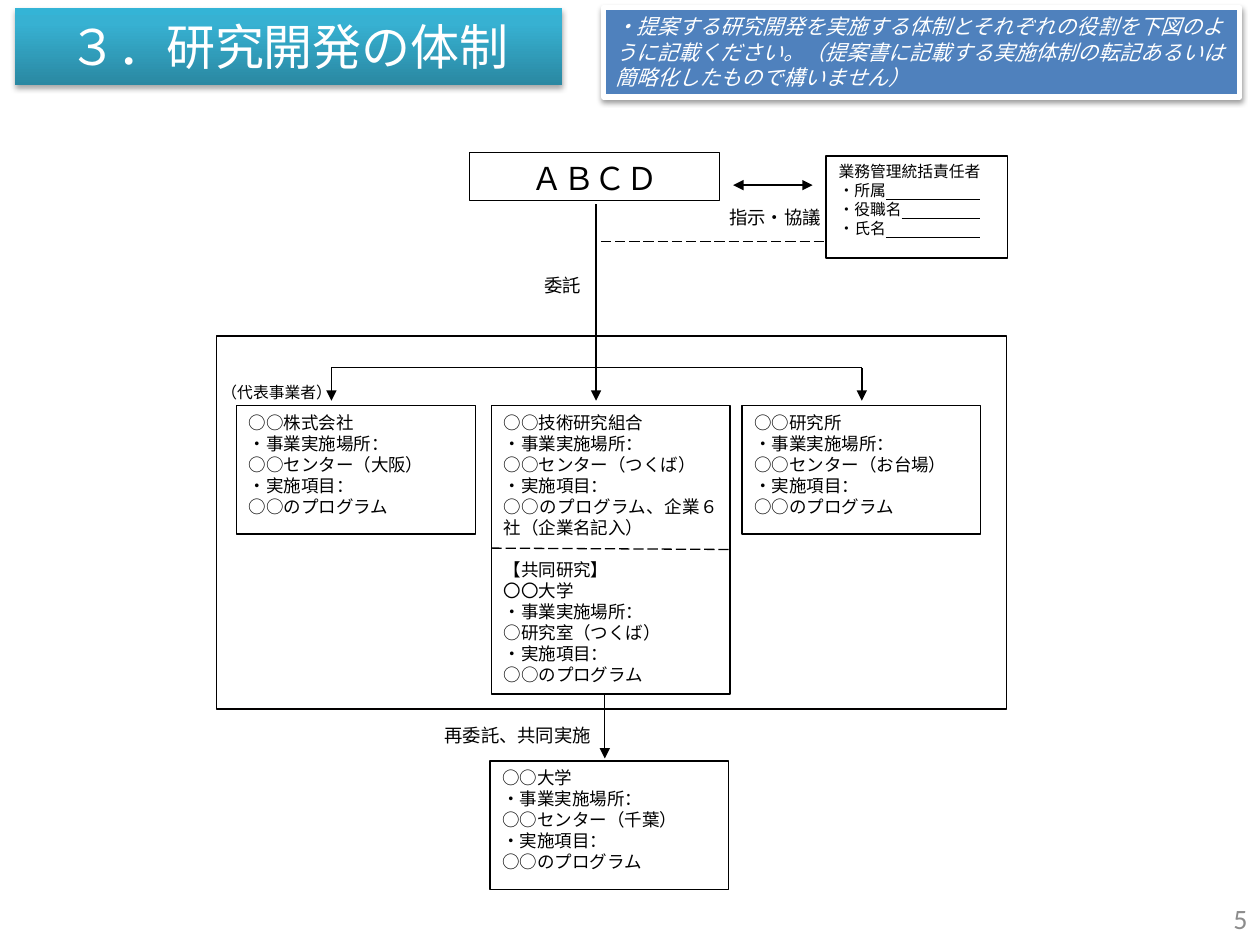
"""Build the slide that charts a research and development structure."""
from lxml import etree
from pptx import Presentation
from pptx.dml.color import RGBColor
from pptx.enum import dml, shapes, text
from pptx.oxml import ns
from pptx.util import Pt

LEFT, MID, RIGHT, JUST = (
    text.PP_ALIGN.LEFT, text.PP_ALIGN.CENTER, text.PP_ALIGN.RIGHT, text.PP_ALIGN.JUSTIFY)
TOP, CENTER = text.MSO_ANCHOR.TOP, text.MSO_ANCHOR.MIDDLE


def color(code):
    return RGBColor.from_string(code)


def node(root, tag, **attrs):
    return etree.SubElement(root, ns.qn(f"a:{tag}"), **attrs)


class Chart:
    font, ink, paper, thin = "Arial", "000000", "FFFFFF", 0.75

    def __init__(self, deck):
        self.slide = deck.slides.add_slide(deck.slide_layouts[5])

    def words(self, shape, lines, size, align=JUST, ink=None, font=None,
              anchor=TOP, italic=None):
        frame = shape.text_frame
        frame.word_wrap = True
        frame.auto_size = text.MSO_AUTO_SIZE.NONE
        frame.vertical_anchor = anchor
        for i, line in enumerate(lines):
            para = frame.add_paragraph() if i else frame.paragraphs[0]
            para.alignment = align
            for j, part in enumerate([line] if isinstance(line, str) else line):
                run = para.add_run()
                run.text = part
                face = run.font
                face.name, face.size = font or self.font, Pt(size)
                face.color.rgb = color(ink or self.ink)
                face.italic = italic
                face.underline = True if j else None
        return frame

    def shade(self, shape, alpha, dist):
        group = node(shape._element.spPr, "effectLst")
        cast = node(group, "outerShdw", blurRad=str(Pt(3.1)), dist=str(Pt(dist)),
                    dir="5400000", rotWithShape="0")
        node(node(cast, "srgbClr", val="000000"), "alpha", val=str(alpha * 1000))

    def title(self, line, spot):
        shape = self.slide.shapes.title
        shape.left, shape.top, shape.width, shape.height = map(Pt, spot)
        self.words(shape, [line], 28, MID, self.paper, anchor=CENTER)
        grad = node(shape._element.spPr, "gradFill", rotWithShape="1")
        stops = node(grad, "gsLst")
        for place, code in ((0, "2A88A2"), (80, "37B1D2"), (100, "34B4D6")):
            node(node(stops, "gs", pos=str(place * 1000)), "srgbClr", val=code)
        node(grad, "lin", ang="16200000", scaled="0")
        self.shade(shape, 35, 1.8)

    def rect(self, spot, fill=None, line=None, width=None):
        shape = self.slide.shapes.add_shape(
            shapes.MSO_SHAPE.RECTANGLE, *map(Pt, spot))
        if fill:
            shape.fill.solid()
            shape.fill.fore_color.rgb = color(fill)
        else:
            shape.fill.background()
        shape.line.color.rgb = color(line or self.ink)
        shape.line.width = Pt(width or self.thin)
        return shape

    def box(self, spot, lines, size=10, align=JUST):
        shape = self.rect(spot, self.paper)
        shape.shadow.inherit = False
        return self.words(shape, lines, size, align)

    def note(self, spot, line):
        shape = self.rect(spot, "4F81BD", self.paper, 3)
        self.words(shape, [line], 12, LEFT, self.paper, italic=True)
        self.shade(shape, 38, 1.6)

    def frame(self, spot):
        self.rect(spot, line="020000", width=1).shadow.inherit = False

    def label(self, spot, line, size=10.5, **style):
        self.words(self.slide.shapes.add_textbox(*map(Pt, spot)), [line], size, **style)

    def line(self, start, end, tips=(), dash=False):
        wire = self.slide.shapes.add_connector(
            shapes.MSO_CONNECTOR.STRAIGHT, *map(Pt, (*start, *end)))
        wire.line.color.rgb = color(self.ink)
        wire.line.width = Pt(self.thin)
        if dash:
            wire.line.dash_style = dml.MSO_LINE.LONG_DASH
        props = wire._element.spPr
        for tip in tips:
            node(props.find(ns.qn("a:ln")), tip, type="triangle")
        node(props, "effectLst")


def work(name, site, task="○○のプログラム"):
    return [name, "・事業実施場所：", site, "・実施項目：", task]


def main():
    deck = Presentation()
    deck.slide_width, deck.slide_height = Pt(720), Pt(540)
    chart = Chart(deck)
    tail = ("tailEnd",)

    chart.label((552, 510.5, 168, 28.8), "5", 16, align=RIGHT, ink="8C8C8C",
                font="Calibri", anchor=CENTER)
    chart.title("３．研究開発の体制", (8.6, 4.4, 312.5, 44.2))
    chart.note((344.9, 4.4, 363.6, 51.1),
               "・提案する研究開発を実施する体制とそれぞれの役割を下図のように記載ください。"
               "（提案書に記載する実施体制の転記あるいは簡略化したもので構いません）")

    chart.line((419, 105.8), (464.4, 105.8), ("headEnd", "tailEnd"))
    chart.box((268.4, 87.1, 142.6, 27.6), ["ＡＢＣＤ"], 18, MID)
    blank = "　"
    chart.box((472.1, 89.1, 103.7, 58.4), [
        "業務管理統括責任者", ("・所属", blank * 6),
        ("・役職名", blank * 5), ("・氏名", blank * 6)], 9)
    chart.line((343.4, 138.2), (472.1, 138.2), dash=True)
    chart.label((409.7, 114.5, 73.4, 23.8), "指示・協議")

    left, stem, right, bar, tip = 189.4, 340.6, 492.5, 210.2, 229
    chart.line((stem, 116.6), (stem, tip), tail)
    for x in (left, right):
        chart.line((x, bar), (x, tip), tail)
    chart.line((left, bar), (right, bar))

    wide, tall, row = 136.4, 73.4, 231.8
    chart.box((424.1, row, wide, tall), work("○○研究所", "○○センター（お台場）"))
    chart.box((135.2, row, wide, tall), work("○○株式会社", "○○センター（大阪）"))
    chart.label((119.5, 215.3, 84.2, 20.9), "（代表事業者）", 9)
    union = chart.box((280.8, row, wide, 164.9), [
        *work("○○技術研究組合", "○○センター（つくば）",
              "○○のプログラム、企業６社（企業名記入）"),
        "【共同研究】", *work("〇〇大学", "○研究室（つくば）")])
    union.paragraphs[5].space_before = Pt(12)
    chart.line((280.8, 313.2), (417.2, 314), dash=True)
    chart.box((280.1, 434.9, wide, tall), work("○○大学", "○○センター（千葉）"))
    chart.line((345.6, 396.7), (345.6, 433.4), tail)
    chart.label((303.8, 153.4, 39.6, 23.8), "委託")
    chart.label((247, 410.4, 100.8, 20.2), "再委託、共同実施")
    chart.frame((123.8, 192.2, 451.4, 213.1))
    deck.save("out.pptx")


if __name__ == "__main__":
    main()
